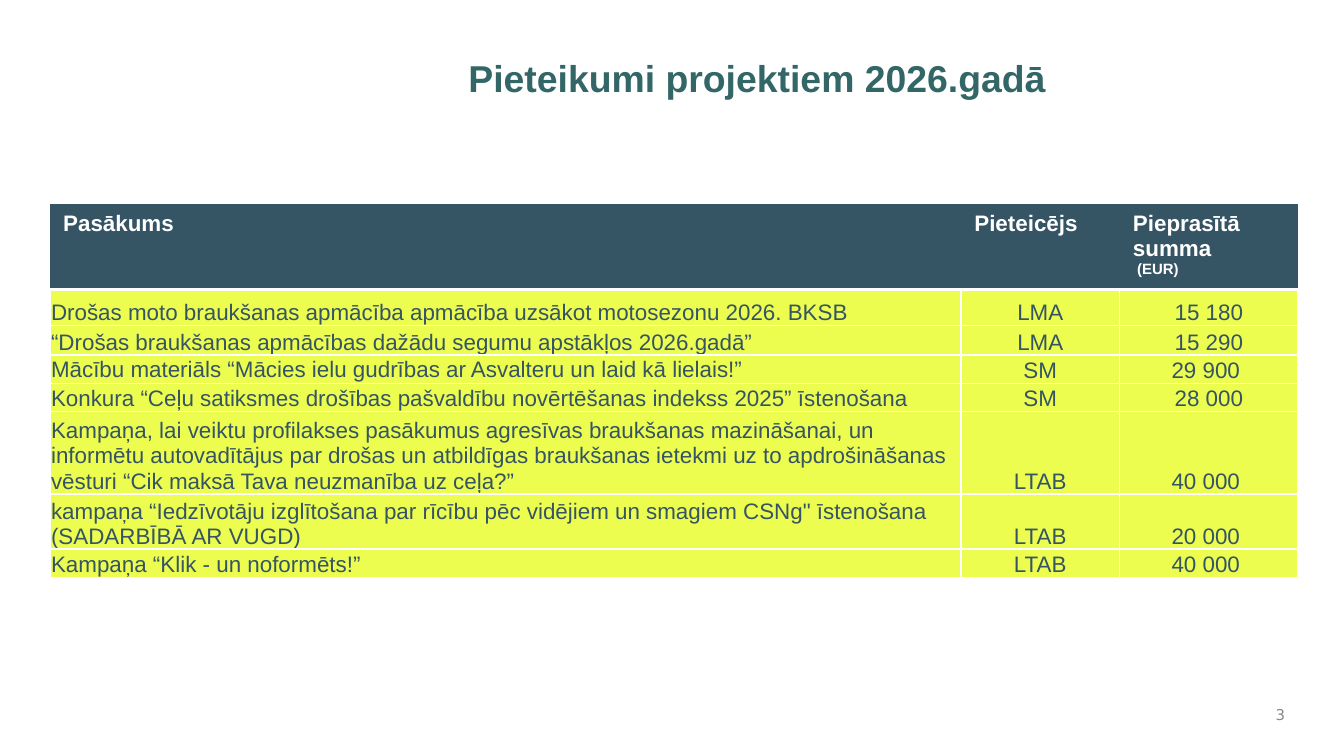
from dataclasses import dataclass

from lxml.etree import SubElement
from pptx import Presentation
from pptx.dml.color import RGBColor
from pptx.enum.text import MSO_ANCHOR as Anchor, PP_ALIGN as Align
from pptx.oxml.ns import qn
from pptx.util import Inches, Pt

WIDTH = 10
HEIGHT = WIDTH * 9 / 16


@dataclass(frozen=True)
class Theme:
    title: str = "336666"
    header: str = "355464"
    body: str = "ECFD4F"
    light: str = "FFFFFF"
    muted: str = "898989"
    font: str = "Arial"
    number_font: str = "DejaVu Sans"
    title_size: int = 20
    text_size: int = 12
    small_size: int = 8


THEME = Theme()
COLUMN_WIDTHS = (6.78, 1.18, 1.33)
MIN_ROW_HEIGHTS = (0, 0.27, 0.22, 0.16, 0, 0, 0, 0)  # rows grow to fit their text
JUSTIFIED_ROW = 3
HEADINGS = (
    [("Pasākums", THEME.text_size)],
    [("Pieteicējs", THEME.text_size)],
    [("Pieprasītā summa", THEME.text_size), (" (EUR)", THEME.small_size)],
)
APPLICATIONS = (
    ("Drošas moto braukšanas apmācība apmācība uzsākot motosezonu 2026. BKSB", "LMA", "15 180"),
    ("“Drošas braukšanas apmācības dažādu segumu apstākļos 2026.gadā”", "LMA", "15 290"),
    ("Mācību materiāls “Mācies ielu gudrības ar Asvalteru un laid kā lielais!” ", "SM", "29 900 "),
    ("Konkura “Ceļu satiksmes drošības pašvaldību novērtēšanas indekss 2025” īstenošana",
     "SM", "28 000"),
    ("Kampaņa, lai veiktu profilakses pasākumus agresīvas braukšanas mazināšanai, un "
     "informētu autovadītājus par drošas un atbildīgas braukšanas ietekmi uz to "
     "apdrošināšanas vēsturi “Cik maksā Tava neuzmanība uz ceļa?”", "LTAB", "40 000 "),
    ("kampaņa “Iedzīvotāju izglītošana par rīcību pēc vidējiem un smagiem CSNg\" īstenošana "
     "(SADARBĪBĀ AR VUGD)", "LTAB", "20 000 "),
    ("Kampaņa “Klik - un noformēts!”", "LTAB", "40 000 "),
)


def write(paragraph, text, *, size=THEME.text_size, color=THEME.header,
          font=THEME.font, bold=False, align=Align.LEFT):
    paragraph.alignment = align
    run = paragraph.add_run()
    run.text = text
    run.font.name, run.font.size, run.font.bold = font, Pt(size), bold
    run.font.color.rgb = RGBColor.from_string(color)


def add_label(slide, box, text, anchor=Anchor.TOP, **style):
    frame = slide.shapes.add_textbox(*map(Inches, box)).text_frame
    frame.word_wrap = True
    frame.vertical_anchor = anchor
    write(frame.paragraphs[0], text, **style)


def style_cell(cell, fill, edges):
    """Set the fill and the white edges; edges maps a side (L, R, T, B) to points."""
    properties = cell._tc.get_or_add_tcPr()
    for side in "LRTB":
        points = edges.get(side, 0)
        line = SubElement(properties, qn(f"a:ln{side}"), w=str(Pt(points)))
        if points:
            paint = SubElement(line, qn("a:solidFill"))
            SubElement(paint, qn("a:srgbClr"), val=THEME.light)
        else:
            SubElement(line, qn("a:noFill"))
    cell.fill.solid()
    cell.fill.fore_color.rgb = RGBColor.from_string(fill)


def fill_header(table):
    for column, lines in enumerate(HEADINGS):
        cell = table.cell(0, column)
        style_cell(cell, THEME.header, {"B": 2})
        frame = cell.text_frame
        for index, (text, size) in enumerate(lines):
            paragraph = frame.add_paragraph() if index else frame.paragraphs[0]
            write(paragraph, text, size=size, color=THEME.light, bold=True)


def fill_applications(table):
    last = len(APPLICATIONS)
    for row, application in enumerate(APPLICATIONS, start=1):
        edges = {"L": 1, "R": 1, "T": 2 if row == 1 else 1, "B": 0 if row == last else 1}
        for column, text in enumerate(application):
            cell = table.cell(row, column)
            style_cell(cell, THEME.body, edges)
            cell.margin_left = cell.margin_right = cell.margin_top = Inches(0.01)
            cell.margin_bottom = 0
            justified = row == JUSTIFIED_ROW and column == 0
            cell.vertical_anchor = Anchor.MIDDLE if justified else Anchor.BOTTOM
            align = Align.JUSTIFY if justified else Align.CENTER if column else Align.LEFT
            write(cell.text_frame.paragraphs[0], text, align=align)


def add_applications_table(slide, box):
    holder = slide.shapes.add_table(len(MIN_ROW_HEIGHTS), len(COLUMN_WIDTHS),
                                    *map(Inches, box))
    table = holder.table
    table.horz_banding = False
    for column, width in zip(table.columns, COLUMN_WIDTHS):
        column.width = Inches(width)
    for row, height in zip(table.rows, MIN_ROW_HEIGHTS):
        row.height = Inches(height)
    holder.height = Inches(box[3])
    fill_header(table)
    fill_applications(table)


def main():
    deck = Presentation()
    deck.slide_width, deck.slide_height = Inches(WIDTH), Inches(HEIGHT)
    slide = deck.slides.add_slide(deck.slide_layouts[6])
    add_label(slide, (9.33, 5.19, 0.33, 0.25), "3", Anchor.MIDDLE,
              size=THEME.small_size, color=THEME.muted,
              font=THEME.number_font, align=Align.RIGHT)
    add_applications_table(slide, (0.37, 1.52, sum(COLUMN_WIDTHS), 2.78))
    add_label(slide, (0.23 * WIDTH, 0.36, 0.667 * WIDTH, 0.58),
              "Pieteikumi projektiem 2026.gadā", size=THEME.title_size,
              color=THEME.title, bold=True, align=Align.CENTER)
    deck.save("out.pptx")


if __name__ == "__main__":
    main()
